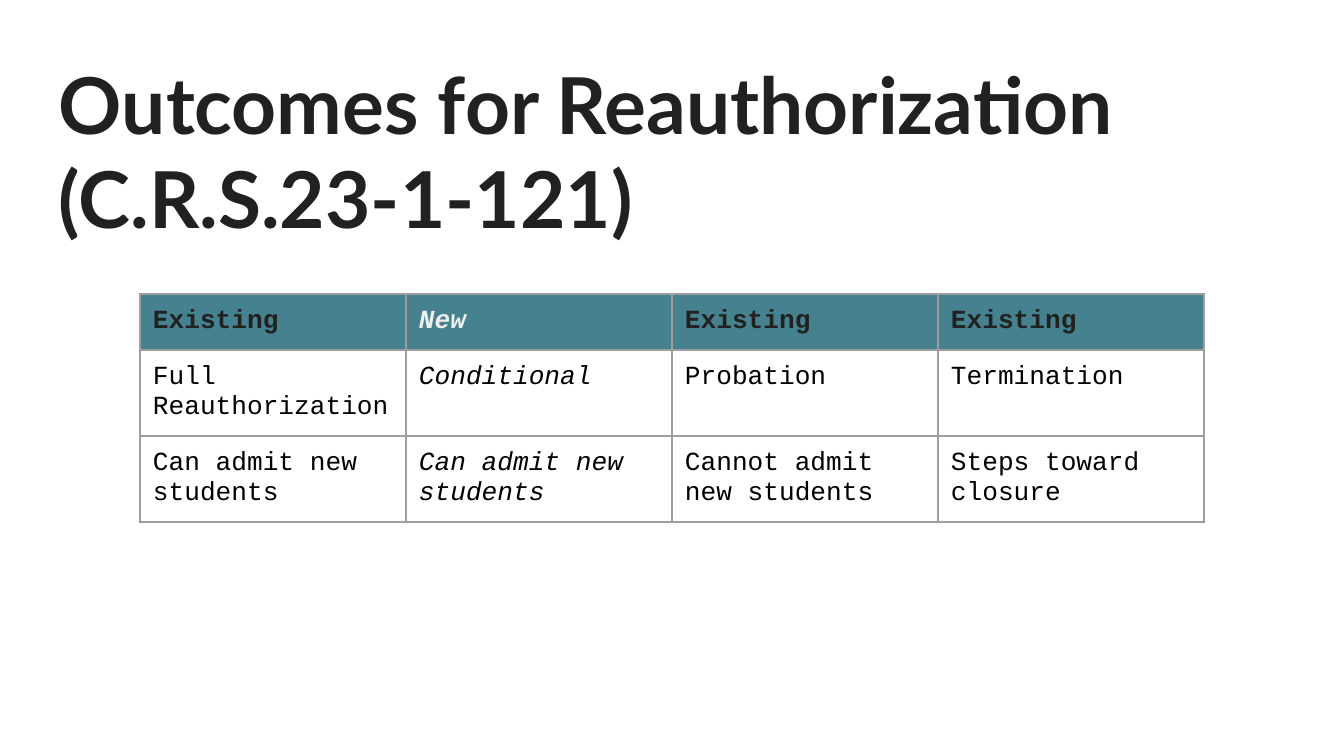
from lxml import etree
from pptx import Presentation
from pptx.dml.color import RGBColor
from pptx.enum.text import MSO_ANCHOR, MSO_AUTO_SIZE, PP_ALIGN
from pptx.oxml.ns import qn
from pptx.util import Emu, Pt

TOP, LEFT, NO_FIT = MSO_ANCHOR.TOP, PP_ALIGN.LEFT, MSO_AUTO_SIZE.NONE

INK = RGBColor(0x21, 0x21, 0x21)
BLACK = RGBColor(0, 0, 0)
PALE = RGBColor(0xEE, 0xEE, 0xEE)
TEAL = RGBColor(0x45, 0x81, 0x8E)
GRAY = RGBColor(0x9E, 0x9E, 0x9E)

INSET = 13
HEADS = [56, 86, 86]  # row heights
NEW = 1  # column of the newly added outcome
ROWS = [
    ["Existing", "New", "Existing", "Existing"],
    ["Full Reauthorization", "Conditional", "Probation", "Termination"],
    ["Can admit new students", "Can admit new students",
     "Cannot admit new students", "Steps toward closure"],
]


def px(n):
    return Emu(round(n * 914400 / 134.4))


def add_run(para, text, face, size, color, bold=False, italic=False):
    run = para.add_run()
    run.text = text
    font = run.font
    font.name, font.size = face, Pt(size)
    font.bold, font.italic = bold, italic
    font.color.rgb = color


def set_inset(box):
    box.margin_left = box.margin_right = px(INSET)
    box.margin_top = box.margin_bottom = px(INSET)


def add_title(slide, text):
    title = slide.shapes.title
    title.left, title.top = px(46), px(43)
    title.width, title.height = px(1252), px(118)
    frame = title.text_frame
    frame.word_wrap, frame.auto_size = True, NO_FIT
    frame.vertical_anchor = TOP
    set_inset(frame)
    para = frame.paragraphs[0]
    para.alignment = LEFT
    add_run(para, text, "Lato", 42, INK, bold=True)


def add_edges(cell):
    props = cell._tc.get_or_add_tcPr()
    for i, side in enumerate(("lnL", "lnR", "lnT", "lnB")):
        line = etree.Element(qn(f"a:{side}"), w=str(Pt(0.75)))
        fill = etree.SubElement(line, qn("a:solidFill"))
        etree.SubElement(fill, qn("a:srgbClr"), val=str(GRAY))
        props.insert(i, line)


def add_grid(slide, rows):
    frame = slide.shapes.add_table(len(rows), len(rows[0]), px(140), px(294),
                                   px(1064), px(sum(HEADS)))
    table = frame.table
    table.first_row = table.horz_banding = False
    for row, high in zip(table.rows, HEADS):
        row.height = px(high)
    for r, texts in enumerate(rows):
        for c, text in enumerate(texts):
            cell = table.cell(r, c)
            set_inset(cell)
            cell.vertical_anchor = TOP
            # Teal header row, plain body
            head = r == 0
            if head:
                cell.fill.solid()
                cell.fill.fore_color.rgb = TEAL
                color = PALE if c == NEW else INK
            else:
                cell.fill.background()
                color = BLACK
            add_edges(cell)
            add_run(cell.text_frame.paragraphs[0], text, "Courier New", 14,
                    color, bold=head, italic=c == NEW)


def main():
    deck = Presentation()
    deck.slide_width, deck.slide_height = px(1344), px(756)
    slide = deck.slides.add_slide(deck.slide_layouts[5])
    add_title(slide, "Outcomes for Reauthorization (C.R.S.23-1-121)")
    add_grid(slide, ROWS)
    deck.save("out.pptx")


if __name__ == "__main__":
    main()
